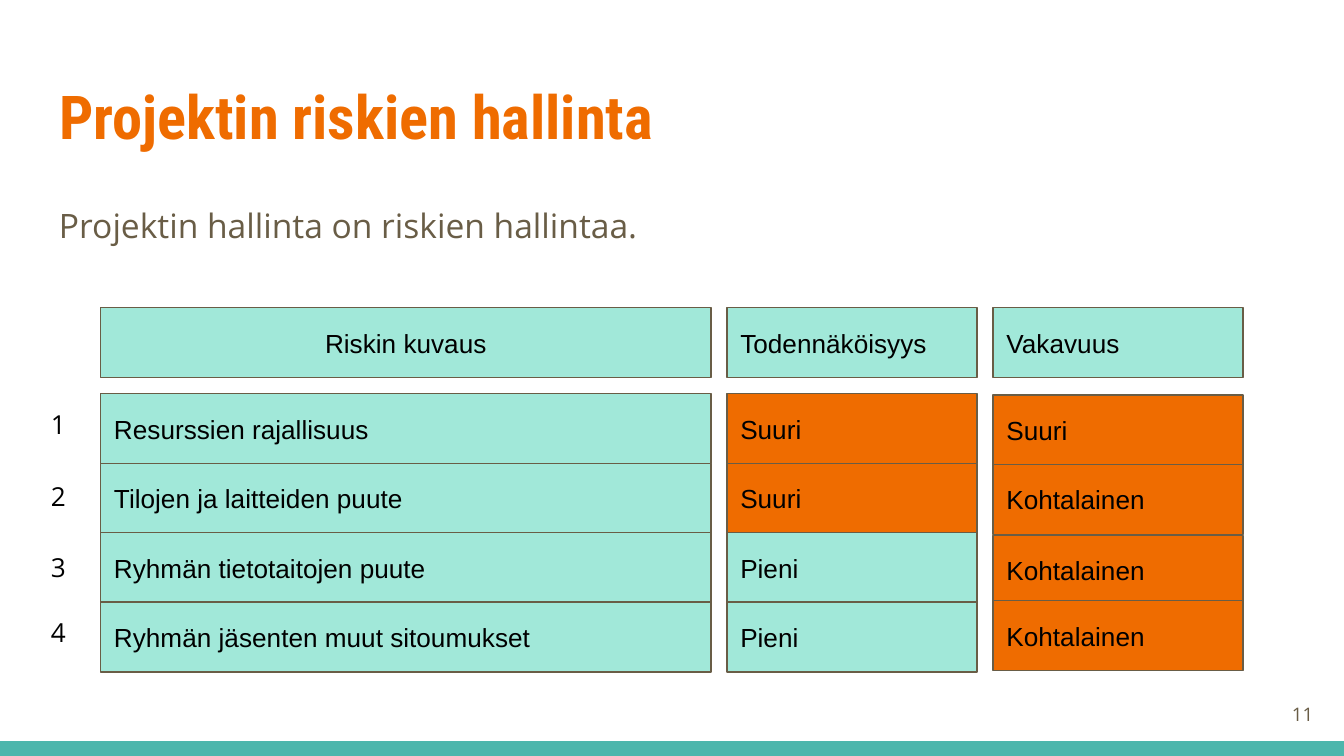
from dataclasses import dataclass

import pptx
import pptx.dml.color
import pptx.enum.shapes
import pptx.enum.text
import pptx.util

ALIGN = pptx.enum.text.PP_ALIGN
ANCHOR = pptx.enum.text.MSO_ANCHOR
RECTANGLE = pptx.enum.shapes.MSO_SHAPE.RECTANGLE


@dataclass(frozen=True)
class Theme:
    orange: str = "EF6C00"
    mint: str = "A1E8D9"
    teal: str = "4DB6AC"
    brown: str = "695D46"
    black: str = "000000"
    title_font: str = "Roboto Condensed"
    body_font: str = "Open Sans"
    cell_font: str = "Arial"
    title_size: float = 32.4
    body_size: float = 18
    cell_size: float = 14
    number_size: float = 10
    line_width: float = 0.75
    inset: float = 0.1


@dataclass(frozen=True)
class Column:
    left: float
    width: float
    header: str
    header_align: ALIGN
    cells: tuple
    high_risk_rows: tuple
    shifts: tuple = (0, 0, 0, 0)


THEME = Theme()
SLIDE_W = 10
SLIDE_H = SLIDE_W * 9 / 16
MARGIN = 0.34
CONTENT_W = SLIDE_W - 2 * MARGIN
BAR_H = 0.11
HEADER_TOP = 2.29
FIRST_ROW_TOP, LAST_ROW_TOP = 2.93, 4.48
ROW_H = 0.52
ROW_STEP = (LAST_ROW_TOP - FIRST_ROW_TOP) / 3
GAP = 0.12
WIDE, NARROW = 4.54, 1.86
RISK_LEFT = 0.75
ODDS_LEFT = RISK_LEFT + WIDE + GAP
SEVERITY_LEFT = ODDS_LEFT + NARROW + GAP
LABEL_SHIFTS = (0.01, 0.03, 0.04, 0.01)

COLUMNS = (
    Column(RISK_LEFT, WIDE, "Riskin kuvaus", ALIGN.CENTER,
           ("Resurssien rajallisuus", "Tilojen ja laitteiden puute",
            "Ryhmän tietotaitojen puute", "Ryhmän jäsenten muut sitoumukset"), ()),
    Column(ODDS_LEFT, NARROW, "Todennäköisyys", ALIGN.LEFT,
           ("Suuri", "Suuri", "Pieni", "Pieni"), (0, 1)),
    Column(SEVERITY_LEFT, NARROW, "Vakavuus", ALIGN.LEFT,
           ("Suuri", "Kohtalainen", "Kohtalainen", "Kohtalainen"), (0, 1, 2, 3),
           (0.01, 0.01, 0.02, -0.01)),
)


def rgb(value):
    return pptx.dml.color.RGBColor.from_string(value)


def inches(*values):
    return [pptx.util.Inches(value) for value in values]


def row_top(row):
    return FIRST_ROW_TOP + row * ROW_STEP


def write(sp, text, font, size, color, align=ALIGN.LEFT, anchor=ANCHOR.TOP, bold=False):
    tf = sp.text_frame
    tf.word_wrap = True
    tf.auto_size = pptx.enum.text.MSO_AUTO_SIZE.NONE
    tf.vertical_anchor = anchor
    inset = pptx.util.Inches(THEME.inset)
    tf.margin_left = tf.margin_right = tf.margin_top = tf.margin_bottom = inset
    p = tf.paragraphs[0]
    p.alignment = align
    r = p.add_run()
    r.text = text
    r.font.name = font
    r.font.size = pptx.util.Pt(size)
    r.font.bold = bold
    r.font.color.rgb = rgb(color)
    return p


def add_title(s, text):
    sp = s.shapes.title
    sp.left, sp.top, sp.width, sp.height = inches(MARGIN, 0.49, CONTENT_W, 0.77)
    write(sp, text, THEME.title_font, THEME.title_size, THEME.orange, bold=True)


def add_text(s, box, text, size, color, align=ALIGN.LEFT, anchor=ANCHOR.TOP):
    sp = s.shapes.add_textbox(*inches(*box))
    return write(sp, text, THEME.body_font, size, color, align, anchor)


def add_box(s, box, fill):
    sp = s.shapes.add_shape(RECTANGLE, *inches(*box))
    sp.shadow.inherit = False
    sp.fill.solid()
    sp.fill.fore_color.rgb = rgb(fill)
    sp.line.fill.background()
    return sp


def add_cell(s, column, top, text, fill, align=ALIGN.LEFT):
    sp = add_box(s, (column.left, top, column.width, ROW_H), fill)
    sp.line.color.rgb = rgb(THEME.brown)
    sp.line.width = pptx.util.Pt(THEME.line_width)
    write(sp, text, THEME.cell_font, THEME.cell_size, THEME.black, align, ANCHOR.MIDDLE)


def add_column(s, column):
    add_cell(s, column, HEADER_TOP, column.header, THEME.mint, column.header_align)
    for row, (text, shift) in enumerate(zip(column.cells, column.shifts)):
        fill = THEME.orange if row in column.high_risk_rows else THEME.mint
        add_cell(s, column, row_top(row) + shift, text, fill)


def add_row_labels(s):
    for row, shift in enumerate(LABEL_SHIFTS):
        box = (0.28, row_top(row) + shift, 0.36, 0.44)
        add_text(s, box, str(row + 1), THEME.cell_size, THEME.black)


def main():
    prs = pptx.Presentation()
    prs.slide_width, prs.slide_height = inches(SLIDE_W, SLIDE_H)
    s = prs.slides.add_slide(prs.slide_layouts[5])
    add_box(s, (0, SLIDE_H - BAR_H, SLIDE_W, BAR_H), THEME.teal)
    add_title(s, "Projektin riskien hallinta")
    p = add_text(s, (MARGIN, 1.38, CONTENT_W, 3.61),
                 "Projektin hallinta on riskien hallintaa.", THEME.body_size, THEME.brown)
    p.line_spacing = 1.15
    p.space_after = pptx.util.Pt(12)
    for column in COLUMNS:
        add_column(s, column)
    add_row_labels(s)
    add_text(s, (9.27, 5.1, 0.6, 0.43), "11", THEME.number_size, THEME.brown,
             ALIGN.RIGHT, ANCHOR.MIDDLE)
    prs.save("out.pptx")


if __name__ == "__main__":
    main()
